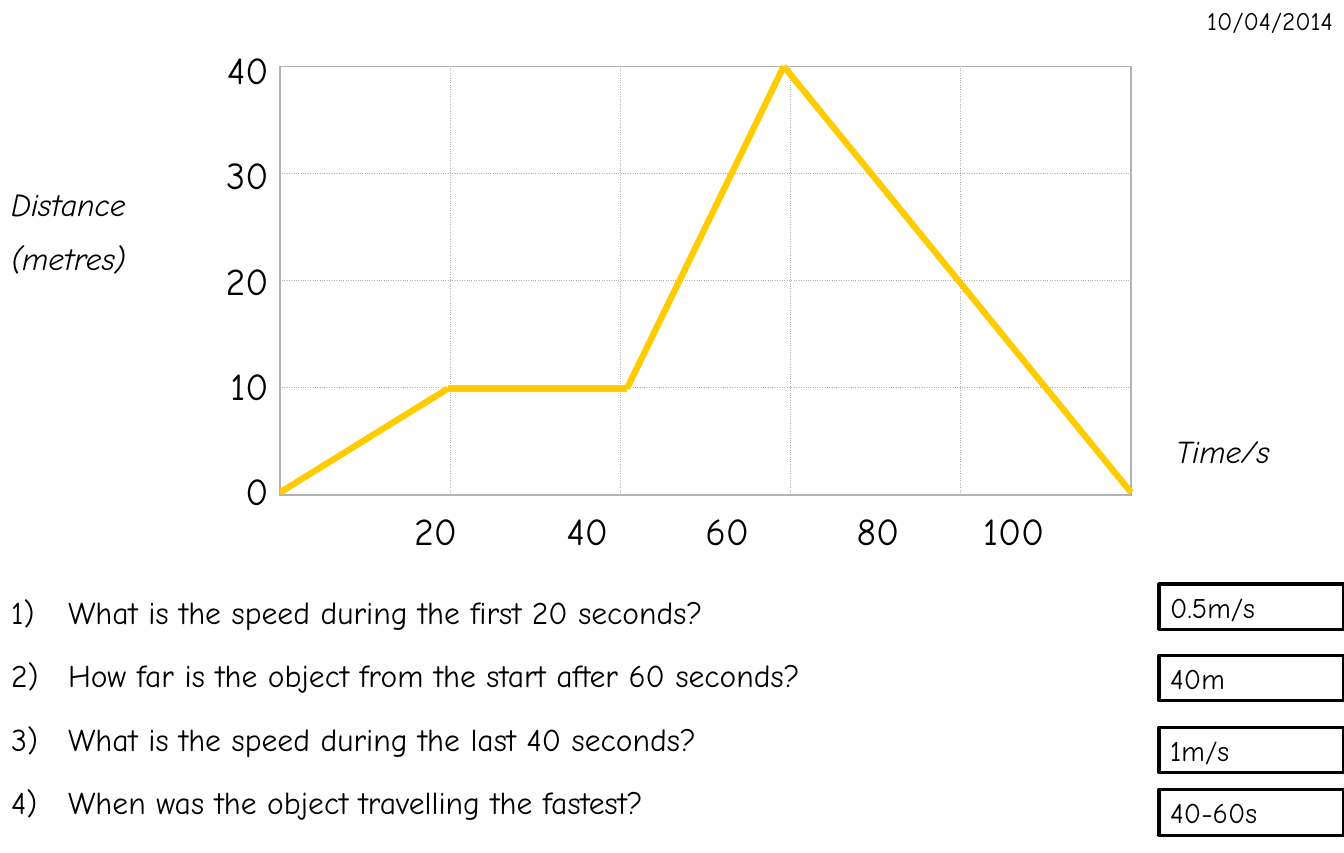
from dataclasses import dataclass
from itertools import pairwise

from lxml.etree import SubElement
from pptx import Presentation
from pptx.dml.color import RGBColor
from pptx.enum.shapes import MSO_CONNECTOR, MSO_SHAPE
from pptx.enum.text import MSO_ANCHOR, MSO_AUTO_SIZE, PP_ALIGN
from pptx.oxml.ns import qn
from pptx.slide import Slide
from pptx.table import _Cell
from pptx.util import Emu, Pt

FONT = "Comic Neue"
BLACK = "000000"
WHITE = "FFFFFF"
GRID_GREY = "B2B2B2"
GRAPH_YELLOW = "FFCC00"
EMU_PER_PX = 3175
PAGE_WIDTH, PAGE_HEIGHT = 3402, 2160
GRID_LEFT, GRID_TOP, GRID_WIDTH, GRID_HEIGHT = 709, 168, 2154, 1086
GRID_COLUMNS, GRID_ROWS = 5, 4
NUMBER_INDENT = 144


@dataclass(frozen=True)
class TextBlock:
    left: int
    top: int
    width: int
    height: int
    lines: tuple[str, ...]
    size: int
    space_before: int = 50
    line_spacing: float = 1.0
    align: PP_ALIGN = PP_ALIGN.LEFT
    italic: bool = False
    numbered: bool = False
    tab_stops: tuple[int, ...] = ()
    framed: bool = False


TEXTS = (
    TextBlock(2693, 0, 709, 144, ("10/04/2014",), 16, space_before=0, align=PP_ALIGN.RIGHT),
    TextBlock(425, 0, 283, 1368, ("40", "30", "20", "10", "0"), 24,
              line_spacing=1.9, align=PP_ALIGN.RIGHT),
    TextBlock(1020, 1272, 2098, 144, ("20\t40\t60\t80\t100",), 24,
              tab_stops=(386, 737, 1120, 1440)),
    TextBlock(0, 1488, 2880, 645, (
        "What is the speed during the first 20 seconds?",
        "How far is the object from the start after 60 seconds?",
        "What is the speed during the last 40 seconds?",
        "When was the object travelling the fastest?",
    ), 20, space_before=80, numbered=True),
    TextBlock(0, 454, 454, 268, ("Distance", "(metres)"), 20, italic=True),
    TextBlock(2948, 1079, 454, 124, ("Time/s",), 20, italic=True),
)
ANSWERS = ((1479, "0.5m/s"), (1660, "40m"), (1842, "1m/s"), (2000, "40-60s"))
JOURNEY = ((709, 1247), (1134, 984), (1587, 984), (1984, 168), (2863, 1247))


def px(length: int) -> Emu:
    return Emu(length * EMU_PER_PX)


def colour(value: str) -> RGBColor:
    return RGBColor.from_string(value)


def add_text(page: Slide, block: TextBlock) -> None:
    place = [px(side) for side in (block.left, block.top, block.width, block.height)]
    if block.framed:
        box = page.shapes.add_shape(MSO_SHAPE.RECTANGLE, *place)
        box.shadow.inherit = False
        box.fill.solid()
        box.fill.fore_color.rgb = colour(WHITE)
        box.line.color.rgb = colour(BLACK)
        box.line.width = Pt(2)
    else:
        box = page.shapes.add_textbox(*place)
    frame = box.text_frame
    frame.text = "\n".join(block.lines)
    frame.word_wrap = True
    frame.vertical_anchor = MSO_ANCHOR.TOP
    frame.auto_size = MSO_AUTO_SIZE.SHAPE_TO_FIT_TEXT
    for para in frame.paragraphs:
        para.alignment = block.align
        para.line_spacing = block.line_spacing
        properties = para._p.get_or_add_pPr()
        before = SubElement(properties, qn("a:spcBef"))
        SubElement(before, qn("a:spcPct"), val=str(block.space_before * 1000))
        if block.numbered:
            properties.set("marL", str(px(NUMBER_INDENT)))
            properties.set("indent", str(px(-NUMBER_INDENT)))
            SubElement(properties, qn("a:buFont"), typeface=FONT)
            SubElement(properties, qn("a:buAutoNum"), type="arabicParenR")
        if block.tab_stops:
            tabs = SubElement(properties, qn("a:tabLst"))
            for stop in block.tab_stops:
                SubElement(tabs, qn("a:tab"), pos=str(px(stop)), algn="l")
        for span in para.runs:
            span.font.name = FONT
            span.font.size = Pt(block.size)
            span.font.italic = block.italic
            span.font.color.rgb = colour(BLACK)


def add_border(cell: _Cell, side: str, dash: str) -> None:
    border = SubElement(cell._tc.get_or_add_tcPr(), qn(f"a:ln{side}"), w=str(Pt(1)))
    fill = SubElement(border, qn("a:solidFill"))
    SubElement(fill, qn("a:srgbClr"), val=GRID_GREY)
    SubElement(border, qn("a:prstDash"), val=dash)


def split_evenly(total: int, count: int) -> list[int]:
    edges = [round(total * index / count) for index in range(count + 1)]
    return [end - start for start, end in pairwise(edges)]


def add_grid(page: Slide) -> None:
    grid = page.shapes.add_table(
        GRID_ROWS, GRID_COLUMNS, px(GRID_LEFT), px(GRID_TOP), px(GRID_WIDTH), px(GRID_HEIGHT)
    ).table
    grid.first_row = False
    grid.horz_banding = False
    for column, width in zip(grid.columns, split_evenly(GRID_WIDTH, GRID_COLUMNS)):
        column.width = px(width)
    for row, height in zip(grid.rows, split_evenly(GRID_HEIGHT, GRID_ROWS)):
        row.height = px(height)
    for row_index in range(GRID_ROWS):
        for column_index in range(GRID_COLUMNS):
            cell = grid.cell(row_index, column_index)
            outer_sides = {
                "L": column_index == 0,
                "R": column_index == GRID_COLUMNS - 1,
                "T": row_index == 0,
                "B": row_index == GRID_ROWS - 1,
            }
            for side, is_outer in outer_sides.items():
                add_border(cell, side, "solid" if is_outer else "sysDot")
            cell.fill.background()


def add_segment(page: Slide, start: tuple[int, int], end: tuple[int, int]) -> None:
    segment = page.shapes.add_connector(
        MSO_CONNECTOR.STRAIGHT, *(px(value) for value in start + end)
    )
    segment.line.color.rgb = colour(GRAPH_YELLOW)
    segment.line.width = Pt(4)
    SubElement(segment._element.spPr, qn("a:effectLst"))


def main() -> None:
    deck = Presentation()
    deck.slide_width, deck.slide_height = px(PAGE_WIDTH), px(PAGE_HEIGHT)
    page = deck.slides.add_slide(deck.slide_layouts[6])
    add_grid(page)
    for start, end in pairwise(JOURNEY):
        add_segment(page, start, end)
    for block in TEXTS:
        add_text(page, block)
    for top, answer in ANSWERS:
        add_text(page, TextBlock(2934, top, 468, 115, (answer,), 18, framed=True))
    deck.save("out.pptx")


if __name__ == "__main__":
    main()
